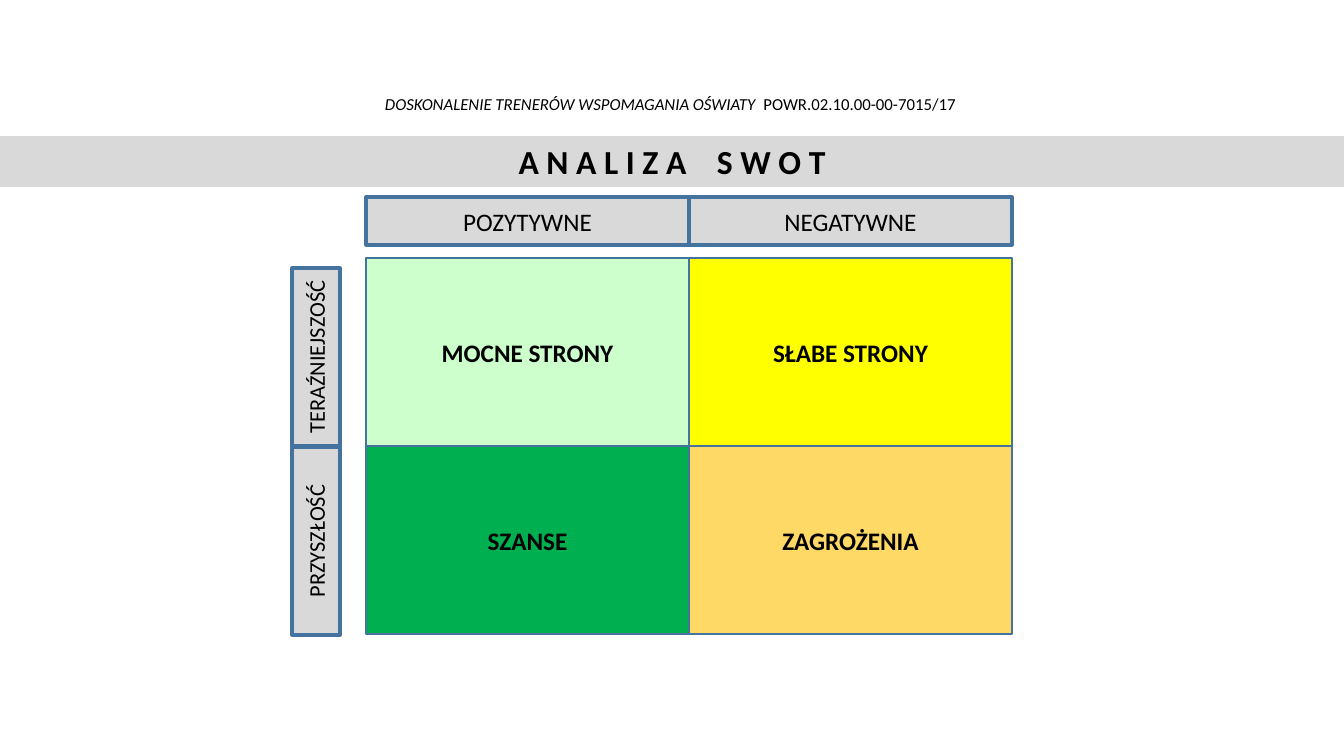
from pptx import Presentation
from pptx.dml.color import RGBColor
from pptx.enum.shapes import MSO_SHAPE
from pptx.enum.text import MSO_ANCHOR, MSO_AUTO_SIZE, PP_ALIGN
from pptx.util import Pt

EMU_PER_PX = 12192000 / 1344
WIDTH, HEIGHT = 1344, 756
COLORS = {
    "text": "000000", "grey": "D9D9D9", "border": "43739E",
    "strengths": "CCFFCC", "weaknesses": "FFFF00",
    "opportunities": "00B050", "threats": "FFD966",
}


def px(n):
    return round(n * EMU_PER_PX)


def rgb(name):
    return RGBColor.from_string(COLORS[name])


class SwotSlide:
    font = "Calibri"

    def __init__(self, prs):
        self.s = prs.slides.add_slide(prs.slide_layouts[5])

    def add_runs(self, sp, runs, size):
        """Fill a shape with one centred line; each run is (text, style dict)."""
        tf = sp.text_frame
        tf.word_wrap = True
        tf.auto_size = MSO_AUTO_SIZE.NONE
        tf.vertical_anchor = MSO_ANCHOR.MIDDLE
        tf.margin_left = tf.margin_right = px(10)
        tf.margin_top = tf.margin_bottom = px(5)
        p = tf.paragraphs[0]
        p.alignment = PP_ALIGN.CENTER
        p.line_spacing = 1.0
        for text, style in runs:
            r = p.add_run()
            r.text = text
            r.font.name = self.font
            r.font.size = Pt(size)
            r.font.bold = style.get("bold", False)
            r.font.italic = style.get("italic", False)
            r.font.color.rgb = rgb("text")
            if "spacing" in style:
                r._r.get_or_add_rPr().set("spc", str(style["spacing"]))

    def title(self, x, y, w, h, runs, size):
        sp = self.s.shapes.title
        sp.left, sp.top, sp.width, sp.height = map(px, (x, y, w, h))
        sp.fill.solid()
        sp.fill.fore_color.rgb = rgb("grey")
        self.add_runs(sp, runs, size)

    def text(self, x, y, w, h, runs, size):
        sp = self.s.shapes.add_textbox(*map(px, (x, y, w, h)))
        self.add_runs(sp, runs, size)

    def box(self, x, y, w, h, text, fill="grey", size=18, line=2.25, bold=False):
        sp = self.s.shapes.add_shape(MSO_SHAPE.RECTANGLE, *map(px, (x, y, w, h)))
        sp.shadow.inherit = False
        sp.fill.solid()
        sp.fill.fore_color.rgb = rgb(fill)
        sp.line.color.rgb = rgb("border")
        sp.line.width = Pt(line)
        self.add_runs(sp, [(text, {"bold": bold})], size)
        return sp

    def upright_box(self, x, y, w, h, text):
        """Box that covers x, y, w, h with its text reading upwards."""
        sp = self.box(x + (w - h) / 2, y + (h - w) / 2, h, w, text, size=16)
        sp.rotation = 270


def main():
    prs = Presentation()
    prs.slide_width, prs.slide_height = px(WIDTH), px(HEIGHT)
    slide = SwotSlide(prs)

    slide.text(93, 92, 1155, 24, [
        ("DOSKONALENIE TRENERÓW WSPOMAGANIA OŚWIATY", {"italic": True}),
        (" ", {"spacing": 270}),
        ("POWR.02.10.00-00-7015/17", {}),
    ], 12)
    slide.title(0, 136, WIDTH, 51, [
        ("A N A L I Z A", {"bold": True}),
        (" ", {"bold": True, "spacing": 1630}),
        ("S W O T", {"bold": True}),
    ], 24)

    left, top, col_w, row_h = 366, 258, 323, 188
    quadrants = [
        [("MOCNE STRONY", "strengths"), ("SŁABE STRONY", "weaknesses")],
        [("SZANSE", "opportunities"), ("ZAGROŻENIA", "threats")],
    ]
    for row, cells in enumerate(quadrants):
        for col, (text, fill) in enumerate(cells):
            slide.box(left + col * col_w, top + row * row_h, col_w, row_h,
                      text, fill, line=1, bold=True)

    for col, text in enumerate(["POZYTYWNE", "NEGATYWNE"]):
        slide.box(left + col * col_w, 197, col_w, 48, text)

    for y, h, text in [(268, 178, "TERAŹNIEJSZOŚĆ"), (447, 188, "PRZYSZŁOŚĆ")]:
        slide.upright_box(292, y, 48, h, text)

    prs.save("out.pptx")


if __name__ == "__main__":
    main()
